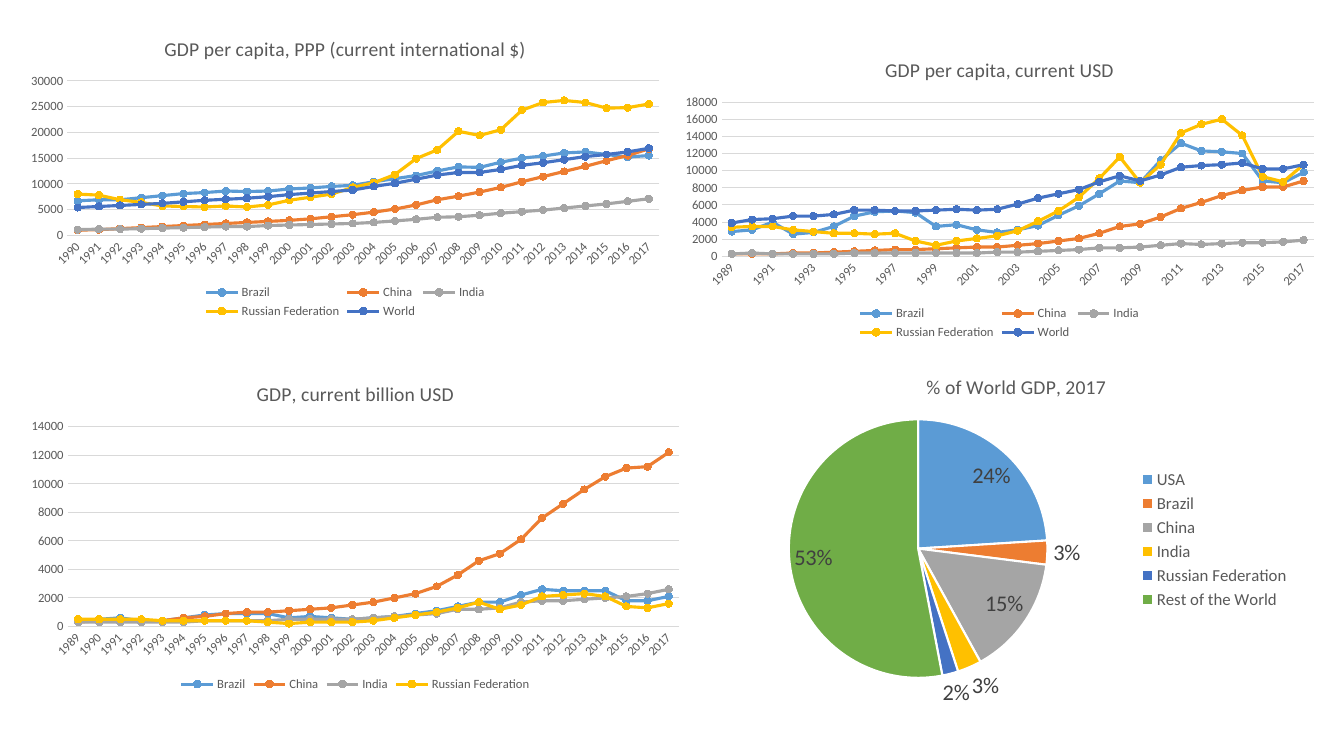
from pptx import Presentation
from pptx.chart.data import CategoryChartData as ChartData
from pptx.dml.color import RGBColor
from pptx.enum.chart import XL_CHART_TYPE as ChartType
from pptx.enum.chart import XL_LABEL_POSITION as LabelPos
from pptx.enum.chart import XL_LEGEND_POSITION as LegendPos
from pptx.enum.chart import XL_MARKER_STYLE as Marker
from pptx.enum.chart import XL_TICK_MARK as Tick
from pptx.util import Emu, Pt

COLORS = {
    "blue": "5B9BD5", "orange": "ED7D31", "gray": "A5A5A5", "gold": "FFC000",
    "navy": "4472C4", "green": "70AD47", "text": "595959", "label": "404040",
    "grid": "D9D9D9", "white": "FFFFFF", "black": "000000",
}
ACCENTS = ["blue", "orange", "gray", "gold", "navy", "green"]

# Line chart values, in hundreds
PPP_PER_CAPITA = {
    "Brazil": [67, 69, 69, 73, 77, 81, 83, 86, 85, 86, 90, 92, 95, 97, 104, 110, 116,
               125, 133, 132, 142, 150, 154, 160, 162, 157, 152, 155],
    "China": [10, 11, 13, 15, 17, 19, 21, 23, 25, 27, 29, 32, 36, 40, 45, 51, 59,
              69, 76, 84, 93, 104, 114, 124, 134, 145, 155, 168],
    "India": [11, 12, 12, 13, 14, 15, 16, 17, 17, 19, 20, 21, 22, 23, 25, 28, 31,
              35, 36, 39, 43, 46, 49, 53, 57, 61, 66, 71],
    "Russian Federation": [80, 78, 69, 64, 57, 56, 55, 57, 55, 59, 68, 74, 80, 93,
                           102, 118, 149, 166, 202, 194, 205, 243, 258, 262, 258,
                           247, 248, 255],
    "World": [54, 56, 58, 60, 62, 65, 68, 70, 72, 75, 79, 82, 85, 88, 95, 101, 109,
              117, 122, 122, 128, 136, 141, 147, 153, 157, 162, 169],
}
USD_PER_CAPITA = {
    "Brazil": [29, 31, 40, 26, 28, 35, 47, 52, 53, 51, 35, 37, 31, 28, 31, 36, 48, 59,
               73, 88, 86, 112, 132, 123, 122, 120, 88, 86, 98],
    "China": [3, 3, 3, 4, 4, 5, 6, 7, 8, 8, 9, 10, 11, 11, 13, 15, 18, 21,
              27, 35, 38, 46, 56, 63, 71, 77, 81, 81, 88],
    "India": [3, 4, 3, 3, 3, 3, 4, 4, 4, 4, 4, 4, 4, 5, 5, 6, 7, 8,
              10, 10, 11, 13, 15, 14, 15, 16, 16, 17, 19],
    "Russian Federation": [34, 35, 35, 31, 29, 27, 27, 26, 27, 18, 13, 18, 21, 24, 30,
                           41, 53, 69, 91, 116, 86, 107, 144, 154, 160, 141, 93, 87,
                           107],
    "World": [39, 43, 44, 47, 47, 49, 54, 54, 53, 53, 54, 55, 54, 55, 61, 68, 73, 78,
              87, 94, 88, 95, 104, 106, 107, 109, 102, 102, 107],
}
TOTAL_GDP = {
    "Brazil": [4, 5, 6, 4, 4, 6, 8, 9, 9, 9, 6, 7, 6, 5, 6, 7, 9, 11,
               14, 17, 17, 22, 26, 25, 25, 25, 18, 18, 21],
    "China": [3, 4, 4, 4, 4, 6, 7, 9, 10, 10, 11, 12, 13, 15, 17, 20, 23, 28,
              36, 46, 51, 61, 76, 86, 96, 105, 111, 112, 122],
    "India": [3, 3, 3, 3, 3, 3, 4, 4, 4, 4, 5, 5, 5, 5, 6, 7, 8, 9,
              12, 12, 13, 17, 18, 18, 19, 20, 21, 23, 26],
    "Russian Federation": [5, 5, 5, 5, 4, 4, 4, 4, 4, 3, 2, 3, 3, 3, 4, 6, 8, 10,
                           13, 17, 12, 15, 21, 22, 23, 21, 14, 13, 16],
}
WORLD_SHARE = {"USA": 24, "Brazil": 3, "China": 15, "India": 3,
               "Russian Federation": 2, "Rest of the World": 53}


class SlideBuilder:
    PX = 9144  # 100 px to the inch
    FONT = "Calibri"

    def __init__(self, deck):
        self.slide = deck.slides.add_slide(deck.slide_layouts[6])

    @staticmethod
    def color(name):
        return RGBColor.from_string(COLORS[name])

    def style(self, font, size, color="text"):
        font.name, font.size, font.bold = self.FONT, Pt(size), False
        font.color.rgb = self.color(color)

    def stroke(self, line, color, width):
        line.color.rgb = self.color(color)
        line.width = Pt(width)

    def fill(self, fill, color):
        fill.solid()
        fill.fore_color.rgb = self.color(color)

    def chart(self, kind, box, title, data, legend_at, legend_size):
        place = [Emu(n * self.PX) for n in box]
        chart = self.slide.shapes.add_chart(kind, *place, data).chart
        self.style(chart.font, 10, "black")
        heading = chart.chart_title.text_frame.paragraphs[0].add_run()
        heading.text = title
        self.style(heading.font, 14)
        chart.chart_title.include_in_layout = False
        chart.has_legend = True
        chart.legend.position = legend_at
        chart.legend.include_in_layout = False
        self.style(chart.legend.font, legend_size)
        return chart

    def line_chart(self, box, title, first_year, countries, top, step):
        data = ChartData()
        data.categories = [str(year) for year in range(first_year, 2018)]
        for country, hundreds in countries.items():
            data.add_series(country, [100 * n for n in hundreds])
        chart = self.chart(ChartType.LINE_MARKERS, box, title, data,
                           LegendPos.BOTTOM, 9)

        # Axes and gridlines
        years, amounts = chart.category_axis, chart.value_axis
        for axis in (years, amounts):
            axis.major_tick_mark = axis.minor_tick_mark = Tick.NONE
            self.style(axis.tick_labels.font, 9)
        self.stroke(years.format.line, "grid", 0.75)
        label_body = chart.element.xpath("//c:catAx/c:txPr/a:bodyPr")[0]
        label_body.set("rot", "-60000000")  # automatic rotation
        label_body.set("vert", "horz")
        amounts.format.line.fill.background()
        amounts.minimum_scale, amounts.maximum_scale = 0, top
        amounts.major_unit = step
        self.stroke(amounts.major_gridlines.format.line, "grid", 0.75)

        # Country lines
        chart.plots[0].vary_by_categories = False
        for country, accent in zip(chart.plots[0].series, ACCENTS):
            country.smooth = False
            self.stroke(country.format.line, accent, 2.25)
            country.marker.style, country.marker.size = Marker.CIRCLE, 5
            self.fill(country.marker.format.fill, accent)
            self.stroke(country.marker.format.line, accent, 0.75)

    def pie_chart(self, box, title, shares):
        data = ChartData()
        data.categories = list(shares)
        data.add_series("Series 1", list(shares.values()))
        chart = self.chart(ChartType.PIE, box, title, data, LegendPos.RIGHT, 12)
        pie = chart.plots[0]
        pie.vary_by_categories = True
        for i, accent in enumerate(ACCENTS):
            slice_format = pie.series[0].points[i].format
            self.fill(slice_format.fill, accent)
            self.stroke(slice_format.line, "white", 1.5)
        labels = pie.series[0].data_labels
        labels.show_percentage, labels.show_value = True, False
        labels.number_format, labels.number_format_is_linked = "0%", False
        labels.position = LabelPos.BEST_FIT
        self.style(labels.font, 16, "label")


def main():
    deck = Presentation()
    deck.slide_width = Emu(1333 * SlideBuilder.PX)
    deck.slide_height = Emu(750 * SlideBuilder.PX)
    gdp = SlideBuilder(deck)

    # Per capita
    gdp.line_chart((18, 20, 649, 300), "GDP per capita, PPP (current international $)",
                   1990, PPP_PER_CAPITA, 30000, 5000)
    gdp.line_chart((667, 41, 649, 300), "GDP per capita, current USD",
                   1989, USD_PER_CAPITA, 18000, 2000)

    # Totals and world share
    gdp.line_chart((18, 362, 669, 328), "GDP, current billion USD",
                   1989, TOTAL_GDP, 14000, 2000)
    gdp.pie_chart((726, 354, 564, 363), "% of World GDP, 2017", WORLD_SHARE)

    deck.save("out.pptx")


if __name__ == "__main__":
    main()
